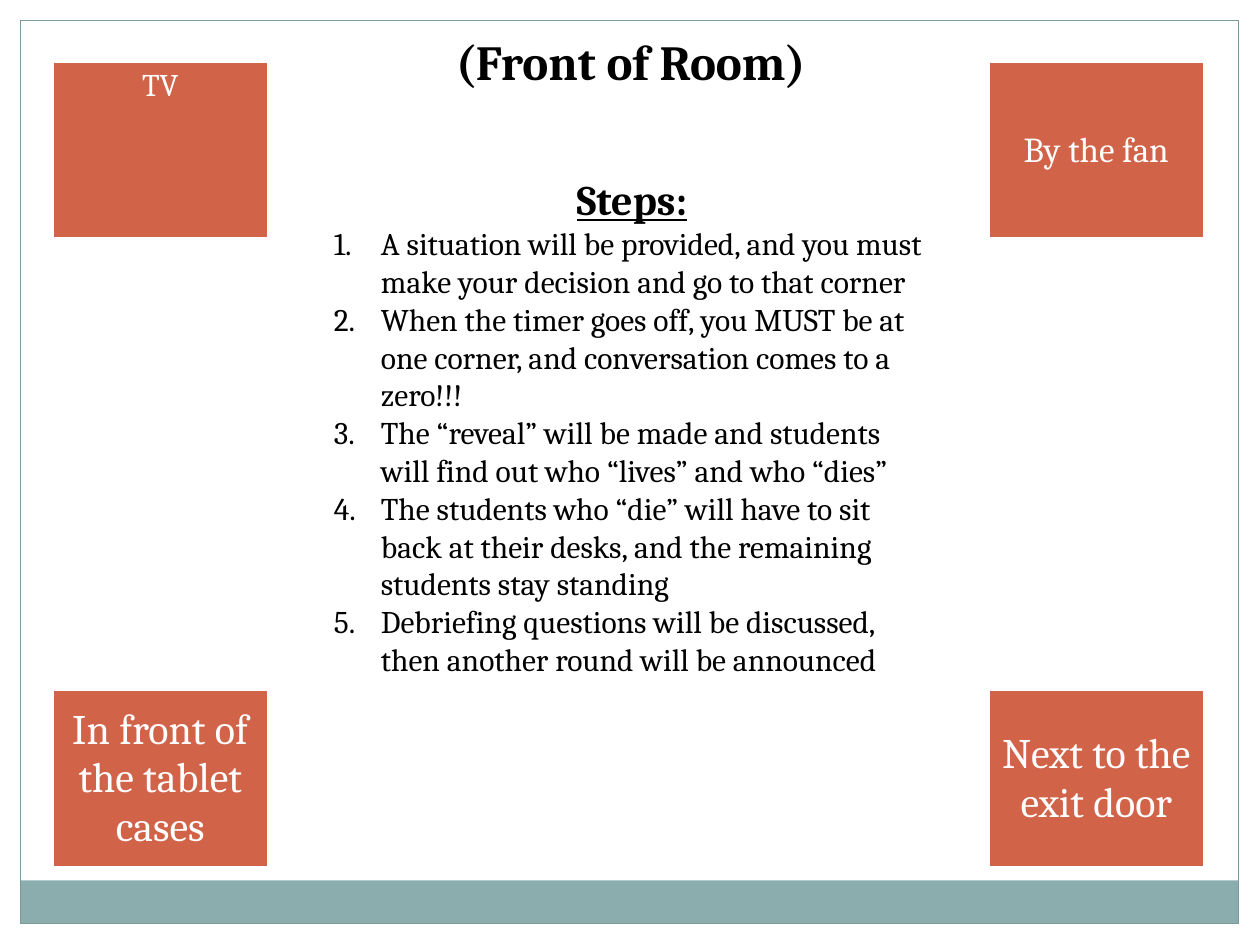
from lxml import etree
from pptx import Presentation
from pptx.dml.color import RGBColor
from pptx.enum.shapes import MSO_SHAPE
from pptx.enum.text import MSO_ANCHOR, MSO_AUTO_SIZE, PP_ALIGN
from pptx.oxml.ns import qn
from pptx.util import Cm, Pt

RECT = MSO_SHAPE.RECTANGLE
TOP, MIDDLE = MSO_ANCHOR.TOP, MSO_ANCHOR.MIDDLE
CENTER, LEFT = PP_ALIGN.CENTER, PP_ALIGN.LEFT
FIT = MSO_AUTO_SIZE.SHAPE_TO_FIT_TEXT

FONT = "Cambria"
BLACK, WHITE = "000000", "FFFFFF"
CORAL, TEAL, EDGE = "D16349", "8CADAE", "7C999A"

STEPS = [
    "A situation will be provided, and you must make your decision and go to that corner",
    "When the timer goes off, you MUST be at one corner, and conversation comes to a zero!!!",
    "The “reveal” will be made and students will find out who “lives” and who “dies”",
    "The students who “die” will have to sit back at their desks, and the remaining students stay standing",
    "Debriefing questions will be discussed, then another round will be announced",
]
# Column, row, label, size, anchor
CORNERS = [
    (0, 0, "TV", 18, TOP),
    (1, 0, "By the fan", 20, MIDDLE),
    (0, 1, "In front of the tablet cases", 24, MIDDLE),
    (1, 1, "Next to the exit door", 24, MIDDLE),
]


def rgb(code):
    return RGBColor.from_string(code)


def style(para, size, color=BLACK, align=CENTER, bold=False, under=False):
    para.alignment = align
    font = para.font
    font.name, font.size = FONT, Pt(size)
    font.bold, font.underline = bold, under
    font.color.rgb = rgb(color)


def add_rect(slide, box, fill=None, line=None):
    rect = slide.shapes.add_shape(RECT, *map(Cm, box))
    rect.shadow.inherit = False
    if fill:
        rect.fill.solid()
        rect.fill.fore_color.rgb = rgb(fill)
    else:
        rect.fill.background()
    if line:
        rect.line.color.rgb = rgb(line)
        rect.line.width = Pt(0.75)
    else:
        rect.line.fill.background()


def add_frame(slide, box, band):
    """Draw the page border with a band of the given height at its foot."""
    left, top, width, height = box
    add_rect(slide, (left, top + height - band, width, band), fill=TEAL)
    add_rect(slide, box, line=EDGE)


def add_title(slide, box, text):
    title = slide.shapes.title
    title.left, title.top, title.width, title.height = map(Cm, box)
    frame = title.text_frame
    frame.text = text
    frame.word_wrap, frame.auto_size = True, FIT
    frame.vertical_anchor = TOP
    style(frame.paragraphs[0], 28, bold=True)


def add_edges(cell):
    """Give the cell white borders, thicker at the bottom."""
    props = cell._tc.get_or_add_tcPr()
    for spot, (side, width) in enumerate(zip("LRTB", (1, 1, 1, 3))):
        line = etree.Element(qn(f"a:ln{side}"), w=str(Pt(width)))
        fill = etree.SubElement(line, qn("a:solidFill"))
        etree.SubElement(fill, qn("a:srgbClr"), val=WHITE)
        props.insert(spot, line)


def add_corner(slide, box, label, size, anchor):
    table = slide.shapes.add_table(1, 1, *map(Cm, box)).table
    cell = table.cell(0, 0)
    cell.text = label
    cell.vertical_anchor = anchor
    cell.fill.solid()
    cell.fill.fore_color.rgb = rgb(CORAL)
    add_edges(cell)
    style(cell.text_frame.paragraphs[0], size, WHITE)


def add_corners(slide, box, width, height):
    """Place one cell in each corner of the box."""
    left, top, across, down = box
    for col, row, *parts in CORNERS:
        spot = (left + col * (across - width), top + row * (down - height))
        add_corner(slide, (*spot, width, height), *parts)


def add_steps(slide, box):
    frame = slide.shapes.add_textbox(*map(Cm, box)).text_frame
    frame.word_wrap, frame.auto_size = True, FIT
    head = frame.paragraphs[0]
    head.text = "Steps:"
    style(head, 24, bold=True, under=True)
    for step in STEPS:
        para = frame.add_paragraph()
        para.text = step
        props = para._p.get_or_add_pPr()
        props.set("marL", str(Cm(0.95)))
        props.set("indent", str(-Cm(0.95)))
        etree.SubElement(props, qn("a:buFont"), typeface="+mj-lt")
        etree.SubElement(props, qn("a:buAutoNum"), type="arabicPeriod")
        style(para, 18, align=LEFT)


def main():
    deck = Presentation()
    deck.slide_width, deck.slide_height = Cm(25.4), Cm(19.05)
    slide = deck.slides.add_slide(deck.slide_layouts[5])
    add_frame(slide, (0.42, 0.42, 24.55, 18.2), 0.87)
    add_title(slide, (8.13, 0.51, 9.17, 1.45), "(Front of Room)")
    add_corners(slide, (1.07, 1.25, 23.19, 16.25), 4.32, 3.58)
    add_steps(slide, (6.48, 3.38, 12.52, 11.28))
    deck.save("out.pptx")


if __name__ == "__main__":
    main()
